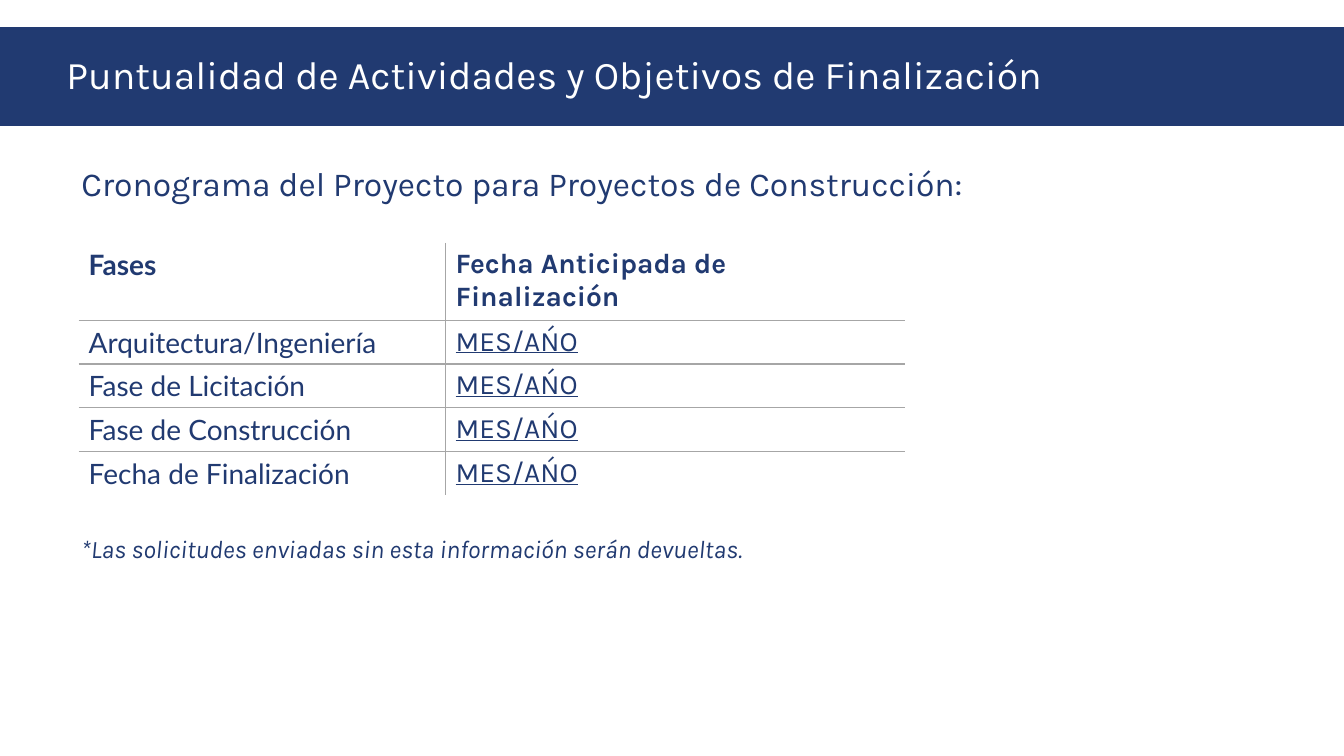
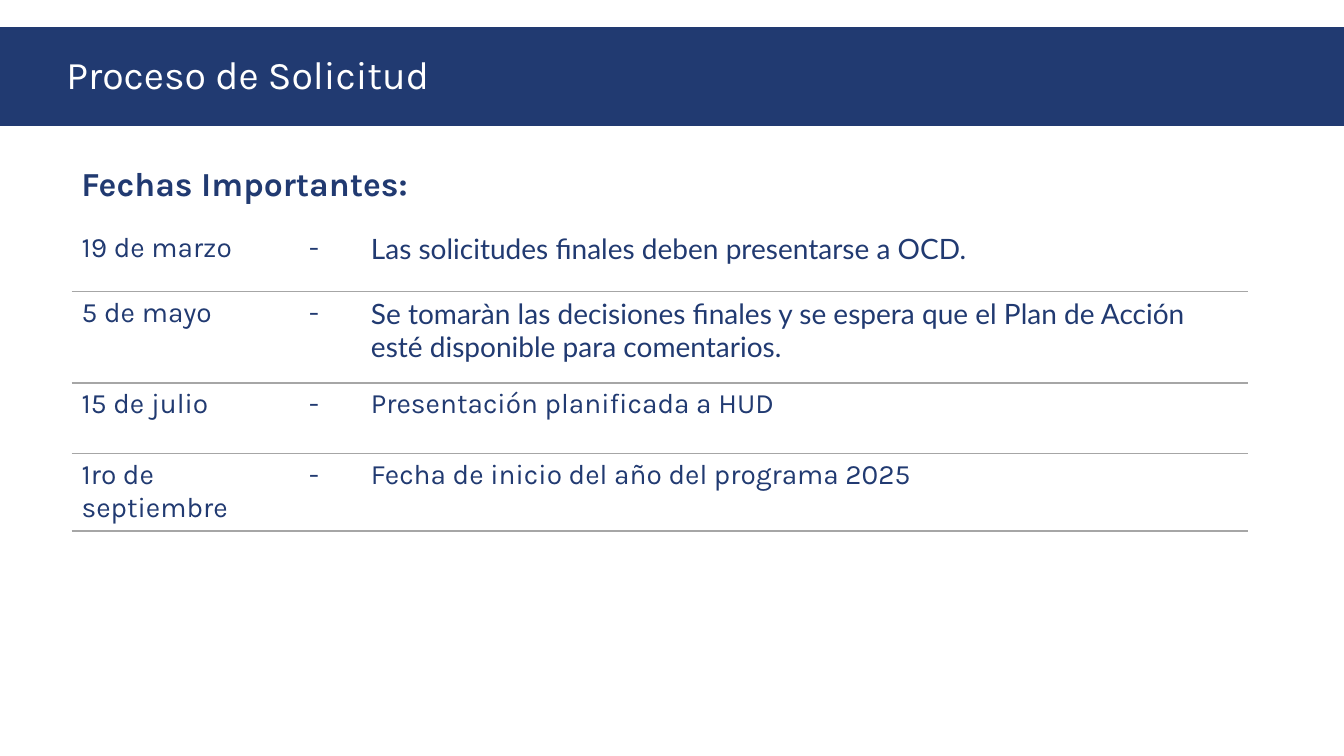
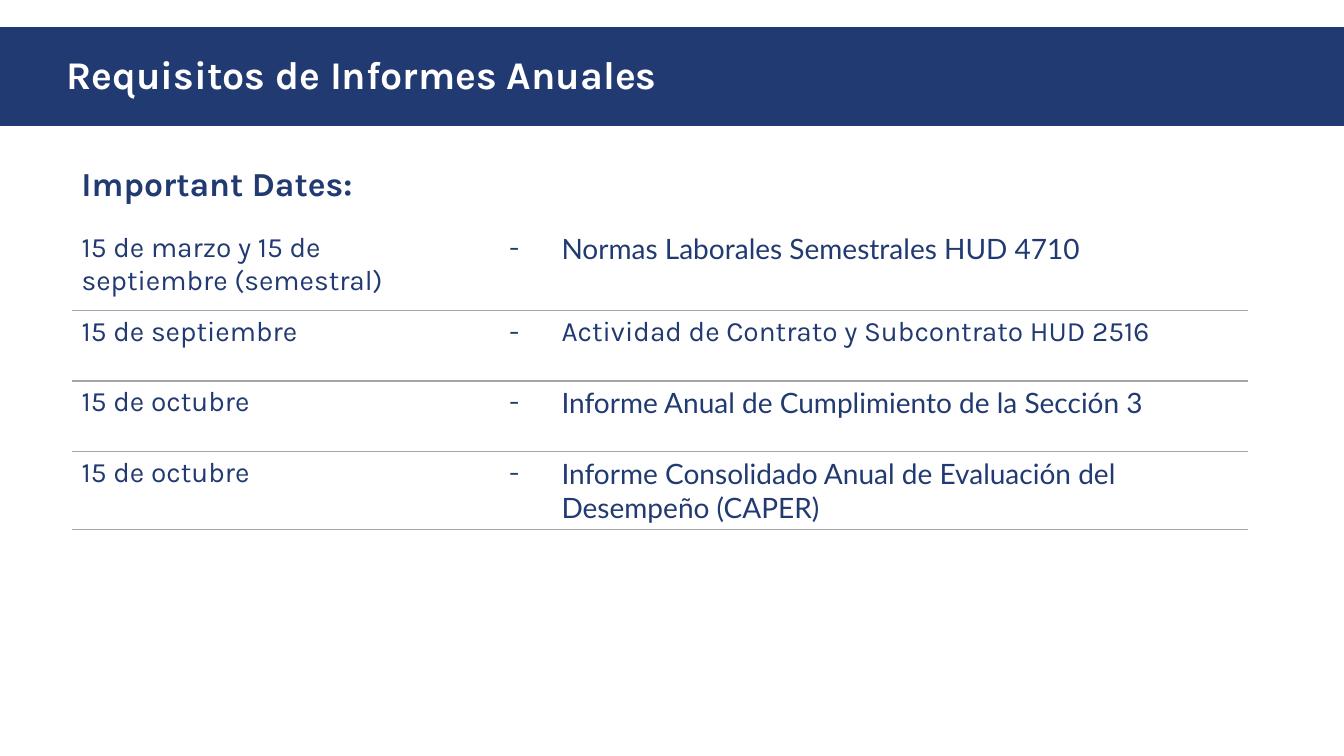
from dataclasses import dataclass

from lxml import etree
from pptx import Presentation
from pptx.dml.color import RGBColor
from pptx.enum.shapes import MSO_SHAPE
from pptx.enum.text import MSO_ANCHOR, PP_ALIGN
from pptx.oxml.ns import qn
from pptx.util import Inches, Pt

RECTANGLE = MSO_SHAPE.RECTANGLE
MIDDLE = MSO_ANCHOR.MIDDLE
LEFT, CENTER = PP_ALIGN.LEFT, PP_ALIGN.CENTER

COLORS = {"navy": "213A71", "white": "FFFFFF", "rule": "A6A6A6"}
KARLA, LATO = "Karla", "Lato"
NO_STYLE = "{2D5ABB26-0587-4C30-8999-92F81FD0307C}"
SLIDE_WIDTH, SLIDE_HEIGHT = 13.33, 7.5
BAND = (0, 0.27, SLIDE_WIDTH, 0.98)
HEADING = (0.71, 1.37, 11.5, 0.7)
NOTE = (0.71, 5.24, 11.5, 0.45)
PHASE_TABLE = (0.78, 2.41)
DATE_TABLE = (0.71, 2.25)


@dataclass
class Cell:
    """Text of one table cell with its style."""
    text: str
    font: str = KARLA
    bold: bool = False
    underline: bool = False
    align: PP_ALIGN = LEFT


def add_run(paragraph, text, size, color="navy", font=KARLA, bold=False, italic=False, underline=False):
    """Append a styled run to the paragraph."""
    run = paragraph.add_run()
    run.text = text
    run.font.name = font
    run.font.size = Pt(size)
    run.font.bold = bold
    run.font.italic = italic
    run.font.underline = underline
    run.font.color.rgb = RGBColor.from_string(COLORS[color])


def add_title_band(slide, box, text, bold=False):
    """Draw the full-width band that holds the slide title."""
    band = slide.shapes.add_shape(RECTANGLE, *map(Inches, box))
    band.shadow.inherit = False
    band.fill.solid()
    band.fill.fore_color.rgb = RGBColor.from_string(COLORS["navy"])
    band.line.fill.background()
    frame = band.text_frame
    frame.word_wrap = True
    frame.vertical_anchor = MIDDLE
    frame.margin_left = Inches(0.66)
    paragraph = frame.paragraphs[0]
    paragraph.alignment = LEFT
    paragraph.line_spacing = 0.9
    add_run(paragraph, text, 28, "white", bold=bold)


def add_text(slide, box, text, size, line_spacing=1.0, **style):
    """Place one paragraph of text in the box."""
    frame = slide.shapes.add_textbox(*map(Inches, box)).text_frame
    frame.word_wrap = True
    paragraph = frame.paragraphs[0]
    paragraph.line_spacing = line_spacing
    add_run(paragraph, text, size, **style)


def set_borders(cell, sides):
    """Draw thin grey rules on the given sides, a subset of LRTB in that order."""
    properties = cell._tc.get_or_add_tcPr()
    for side in sides:
        line = etree.SubElement(properties, qn(f"a:ln{side}"), w=str(Pt(1)))
        fill = etree.SubElement(line, qn("a:solidFill"))
        etree.SubElement(fill, qn("a:srgbClr"), val=COLORS["rule"])


def add_ruled_table(slide, corner, widths, heights, rows, closed=False, divided=False):
    """Build a table with rules between rows, and optionally below and between columns."""
    size = (sum(widths), sum(heights))
    frame = slide.shapes.add_table(len(rows), len(widths), *map(Inches, corner + size))
    table = frame.table
    table.first_row = table.horz_banding = False
    table._tbl.tblPr.find(qn("a:tableStyleId")).text = NO_STYLE
    for column, width in zip(table.columns, widths):
        column.width = Inches(width)
    for row, height in zip(table.rows, heights):
        row.height = Inches(height)
    for row_index, row in enumerate(rows):
        for column_index, content in enumerate(row):
            cell = table.cell(row_index, column_index)
            present = {
                "L": divided and column_index > 0,
                "R": divided and column_index < len(widths) - 1,
                "T": row_index > 0,
                "B": closed or row_index < len(rows) - 1,
            }
            set_borders(cell, [side for side, shown in present.items() if shown])
            cell.fill.background()
            paragraph = cell.text_frame.paragraphs[0]
            paragraph.alignment = content.align
            add_run(paragraph, content.text, 20, font=content.font,
                    bold=content.bold, underline=content.underline)


def start_slide(presentation, title, heading, bold_title=False, bold_heading=True):
    """Add a blank slide with its title band and heading."""
    slide = presentation.slides.add_slide(presentation.slide_layouts[6])
    add_title_band(slide, BAND, title, bold_title)
    add_text(slide, HEADING, heading, 24, 1.5, bold=bold_heading)
    return slide


def add_schedule_slide(presentation):
    """Add the slide with the project phases."""
    slide = start_slide(presentation, "Puntualidad de Actividades y Objetivos de Finalización",
                        "Cronograma del Proyecto para Proyectos de Construcción:", bold_heading=False)
    phases = ["Arquitectura/Ingeniería", "Fase de Licitación", "Fase de Construcción",
              "Fecha de Finalización"]
    rows = [[Cell("Fases", LATO, bold=True), Cell("Fecha Anticipada de Finalización", bold=True)]]
    rows += [[Cell(phase, LATO), Cell("MES/AŃO", underline=True)] for phase in phases]
    heights = [0.75] + [0.43] * len(phases)
    add_ruled_table(slide, PHASE_TABLE, (3.64, 4.56), heights, rows, divided=True)
    add_text(slide, NOTE, "*Las solicitudes enviadas sin esta información serán devueltas.", 18, italic=True)


def add_dates_slide(presentation, title, heading, widths, heights, dates, bold_title=False):
    """Add a slide that lists dates and what is due on each."""
    slide = start_slide(presentation, title, heading, bold_title)
    rows = [[Cell(date), Cell("-", align=CENTER), Cell(event, font)] for date, event, font in dates]
    add_ruled_table(slide, DATE_TABLE, widths, heights, rows, closed=True)


def main():
    """Build and save the presentation."""
    presentation = Presentation()
    presentation.slide_width = Inches(SLIDE_WIDTH)
    presentation.slide_height = Inches(SLIDE_HEIGHT)
    add_schedule_slide(presentation)
    add_dates_slide(
        presentation, "Proceso de Solicitud", "Fechas Importantes:",
        (1.94, 0.93, 8.8), (0.64, 0.91, 0.7, 0.75),
        [
            ("19 de marzo", "Las solicitudes finales deben presentarse a OCD.", LATO),
            ("5 de mayo", "Se tomaràn las decisiones finales y se espera que el Plan de Acción "
                          "esté disponible para comentarios.", LATO),
            ("15 de julio", "Presentación planificada a HUD", KARLA),
            ("1ro de septiembre", "Fecha de inicio del año del programa 2025", KARLA),
        ])
    add_dates_slide(
        presentation, "Requisitos de Informes Anuales", "Important Dates:",
        (4.02, 0.74, 6.91), (0.83, 0.7, 0.7, 0.77),
        [
            ("15 de marzo y 15 de septiembre (semestral)", "Normas Laborales Semestrales HUD 4710", LATO),
            ("15 de septiembre", "Actividad de Contrato y Subcontrato HUD 2516", KARLA),
            ("15 de octubre", "Informe Anual de Cumplimiento de la Sección 3", LATO),
            ("15 de octubre", "Informe Consolidado Anual de Evaluación del Desempeño (CAPER)", LATO),
        ], bold_title=True)
    presentation.save("out.pptx")


if __name__ == "__main__":
    main()
